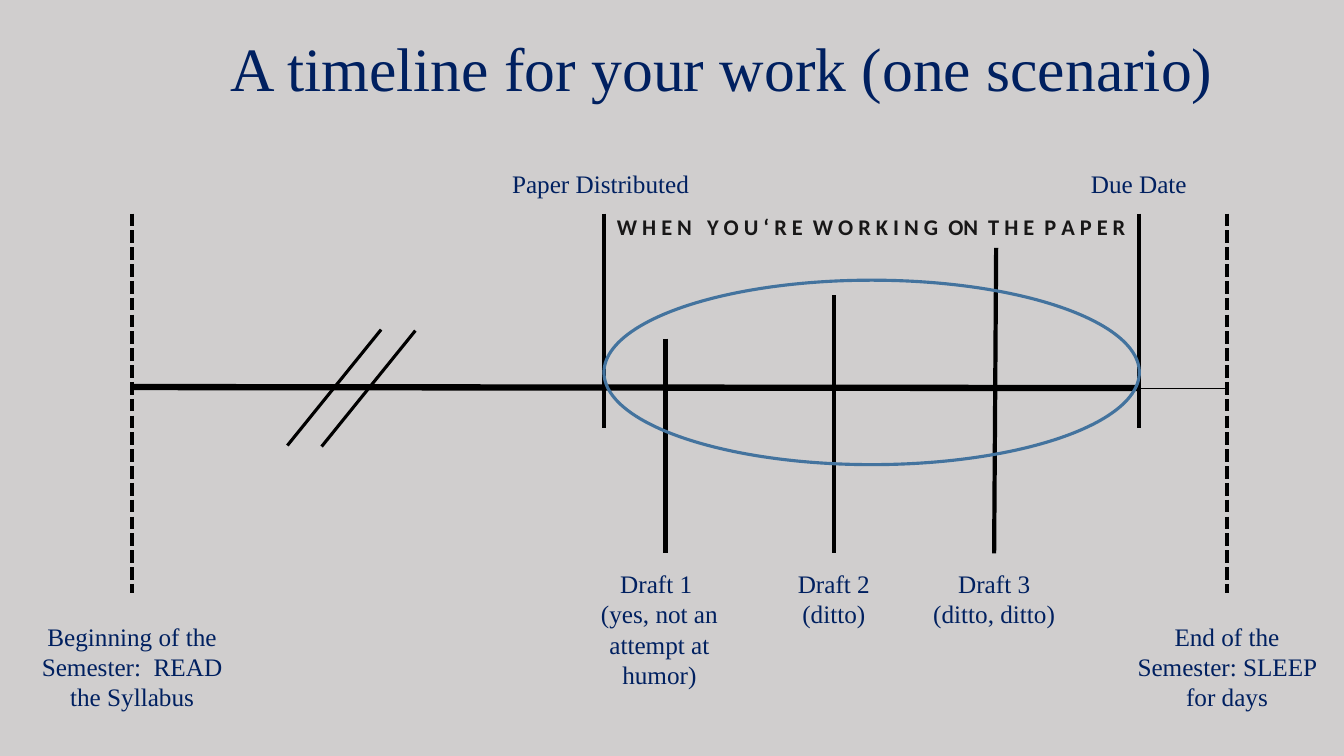
from lxml import etree
from pptx import Presentation
from pptx.dml.color import RGBColor
from pptx.enum.dml import MSO_LINE
from pptx.enum.shapes import MSO_CONNECTOR, MSO_SHAPE
from pptx.enum.text import MSO_AUTO_SIZE, PP_ALIGN
from pptx.oxml.ns import qn
from pptx.util import Inches, Pt

COLORS = {
    "back": "D0CECE",
    "text": "002060",
    "caption": "181717",
    "line": "000000",
    "ring": "43739E",
}
SERIF = "Times New Roman"
START, PAPER, DUE, END = 1.31, 5.99, 11.3, 12.17
AXIS, TOP = 3.85, 2.12


def color(name):
    return RGBColor.from_string(COLORS[name])


def add_text(slide, box, *lines, size=18, font=SERIF, tint="text",
             bold=False, align=PP_ALIGN.CENTER):
    """Add a text box with one paragraph for each line."""
    frame = slide.shapes.add_textbox(*map(Inches, box)).text_frame
    frame.word_wrap = True
    frame.auto_size = MSO_AUTO_SIZE.SHAPE_TO_FIT_TEXT
    for i, line in enumerate(lines):
        para = frame.add_paragraph() if i else frame.paragraphs[0]
        para.alignment = align
        run = para.add_run()
        run.text = line
        run.font.size = Pt(size)
        run.font.name = font
        run.font.bold = bold
        run.font.color.rgb = color(tint)


def add_line(slide, x1, y1, x2, y2, width=3, dash=None):
    ends = map(Inches, (x1, y1, x2, y2))
    line = slide.shapes.add_connector(MSO_CONNECTOR.STRAIGHT, *ends)
    line.line.color.rgb = color("line")
    line.line.width = Pt(width)
    if dash:
        line.line.dash_style = dash
    etree.SubElement(line._element.spPr, qn("a:effectLst"))


def add_ring(slide, box):
    ring = slide.shapes.add_shape(MSO_SHAPE.OVAL, *map(Inches, box))
    ring.shadow.inherit = False
    ring.fill.background()
    ring.line.color.rgb = color("ring")
    ring.line.width = Pt(2.25)


def add_axis(slide):
    add_line(slide, START, AXIS - 0.01, DUE, AXIS, 4.5)
    add_line(slide, DUE, AXIS, END, AXIS, 0.5)
    for x in (START, END):
        add_line(slide, x, TOP, x, 5.88, dash=MSO_LINE.SQUARE_DOT)
    for x in (DUE, PAPER):
        add_line(slide, x, TOP, x, 4.25)
    for x, y in ((2.85, 3.27), (3.19, 3.28)):
        add_line(slide, x + 0.93, y, x, y + 1.15, 2.25)


def add_drafts(slide):
    drafts = (
        (6.6, 3.36, 6.6, 5.83, 1.31, "Draft 1 ", "(yes, not an attempt at humor)"),
        (8.27, 2.93, 8.27, 7.56, 0.71, "Draft 2", "(ditto)"),
        (9.88, 2.46, 9.86, 9.15, 0.71, "Draft 3", "(ditto, ditto)"),
    )
    for x1, top, x2, left, height, name, note in drafts:
        add_line(slide, x1, top, x2, 5.49)
        add_text(slide, (left, 5.59, 1.42, height), name, note)


def main():
    deck = Presentation()
    deck.slide_width, deck.slide_height = Inches(13.33), Inches(7.5)
    slide = deck.slides.add_slide(deck.slide_layouts[6])
    slide.background.fill.solid()
    slide.background.fill.fore_color.rgb = color("back")

    add_text(slide, (2.19, 0.25, 10.21, 0.84),
             "A timeline for your work (one scenario)",
             size=44, align=PP_ALIGN.LEFT)
    add_axis(slide)
    add_drafts(slide)
    add_text(slide, (0.25, 6.11, 2.12, 1.01),
             "Beginning of the Semester:  READ the Syllabus")
    add_text(slide, (11.11, 6.11, 2.12, 1.01),
             "End of the Semester: SLEEP for days")
    add_text(slide, (4.98, 1.62, 2.02, 0.4), "Paper Distributed",
             align=PP_ALIGN.LEFT)
    add_text(slide, (10.68, 1.62, 1.23, 0.4), "Due Date")
    add_ring(slide, (PAPER, 2.78, DUE - PAPER, 1.83))
    add_text(slide, (6.02, 2.07, 5.35, 0.37),
             "W H E N   Y O U ‘ R E  W O R K I N G  ON  T H E  P A P E R",
             size=16, font="Calibri", tint="caption", bold=True,
             align=PP_ALIGN.LEFT)
    deck.save("out.pptx")


if __name__ == "__main__":
    main()
